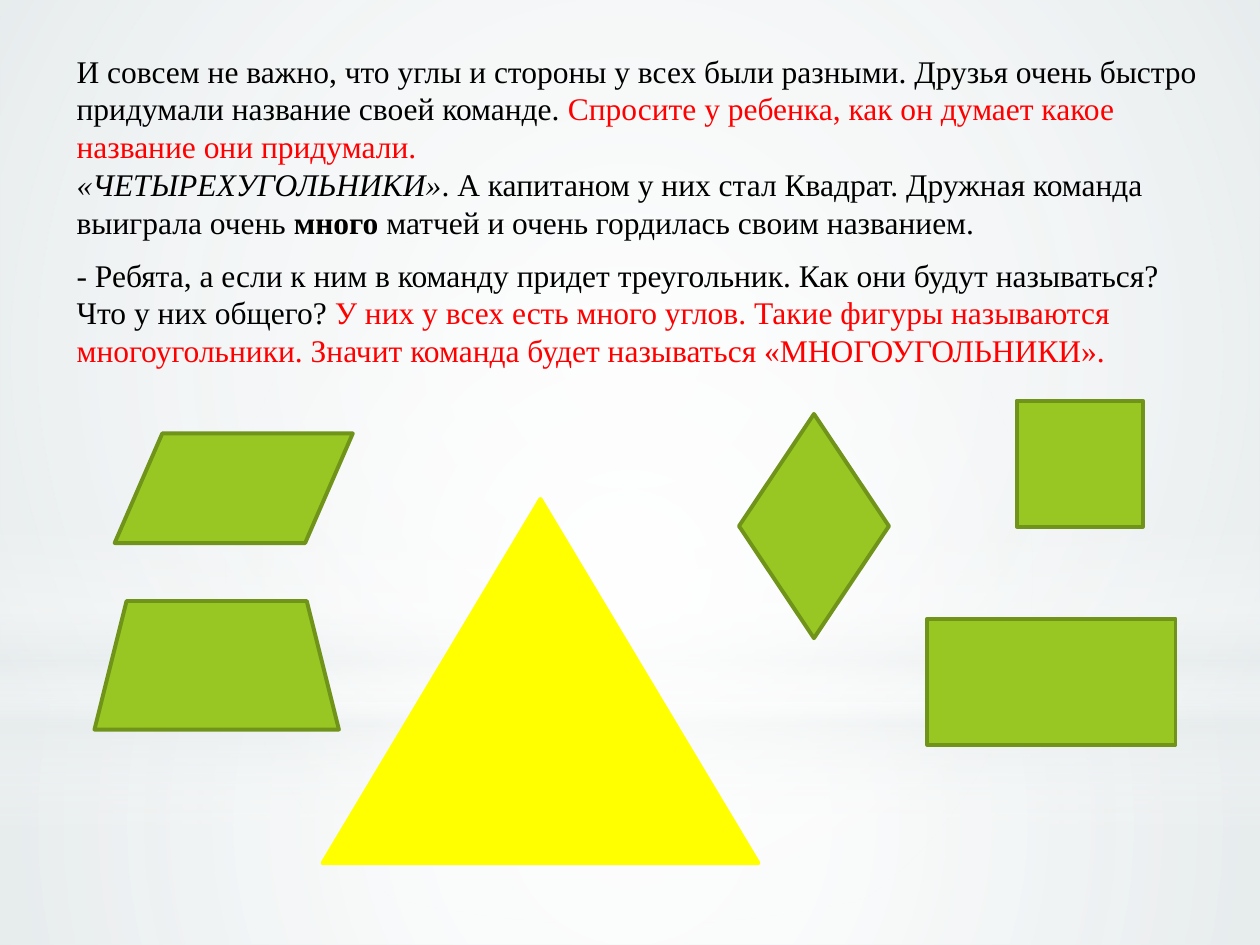
from dataclasses import dataclass

from pptx import Presentation
from pptx.dml.color import RGBColor
from pptx.enum.shapes import MSO_SHAPE as Kind
from pptx.enum.text import MSO_AUTO_SIZE as Fit
from pptx.oxml import parse_xml
from pptx.oxml.ns import nsdecls, qn
from pptx.util import Inches, Pt


@dataclass(frozen=True)
class Theme:
    font: str = "Times New Roman"
    size: float = 18
    edge: float = 2.25
    back: str = "E7ECED"
    white: str = "FFFFFF"
    ink: str = "000000"
    red: str = "FF0000"
    green: str = "98C723"
    moss: str = "70931A"
    sun: str = "FFFF00"


THEME = Theme()


def rgb(code):
    return RGBColor.from_string(code)


def add_run(para, text, color=THEME.ink, bold=False, italic=False):
    run = para.add_run()
    run.text = text
    font = run.font
    font.name, font.size = THEME.font, Pt(THEME.size)
    font.bold, font.italic = bold, italic
    font.color.rgb = rgb(color)


class Page:
    def __init__(self, slide, theme):
        self.slide, self.theme = slide, theme
        fill = slide.background.fill
        fill.solid()
        fill.fore_color.rgb = rgb(theme.back)

    def shape(self, kind, box, fill, line=None, turn=0):
        item = self.slide.shapes.add_shape(kind, *map(Inches, box))
        item.shadow.inherit = False
        item.rotation = turn
        item.fill.solid()
        item.fill.fore_color.rgb = rgb(fill)
        if line:
            item.line.color.rgb = rgb(line)
            item.line.width = Pt(self.theme.edge)
        else:
            item.line.fill.background()
        return item

    def glow(self, kind, box, stops, round=True):
        """Gradient shape; stops are (place %, colour, opacity %)."""
        props = self.shape(kind, box, self.theme.white)._element.spPr
        marks = "".join(
            f'<a:gs pos="{pos * 1000}"><a:srgbClr val="{color}">'
            f'<a:alpha val="{alpha * 1000}"/></a:srgbClr></a:gs>'
            for pos, color, alpha in stops)
        way = ('<a:path path="circle"><a:fillToRect l="50000" t="50000" '
               'r="50000" b="50000"/></a:path>' if round
               else '<a:lin ang="5400000" scaled="0"/>')
        grad = parse_xml(f'<a:gradFill {nsdecls("a")} rotWithShape="1">'
                         f'<a:gsLst>{marks}</a:gsLst>{way}</a:gradFill>')
        props.replace(props.find(qn("a:solidFill")), grad)

    def text(self, box, paras):
        """Each paragraph is a list of (text, format) pairs."""
        frame = self.slide.shapes.add_textbox(*map(Inches, box)).text_frame
        frame.word_wrap = True
        frame.auto_size = Fit.SHAPE_TO_FIT_TEXT
        for num, runs in enumerate(paras):
            para = frame.add_paragraph() if num else frame.paragraphs[0]
            for text, style in runs:
                add_run(para, text, **style)


def main():
    deck = Presentation()
    deck.slide_width, deck.slide_height = Inches(10), Inches(7.5)
    page = Page(deck.slides.add_slide(deck.slide_layouts[6]), THEME)

    white, back = THEME.white, THEME.back
    page.glow(Kind.RECTANGLE, (0, 5.58, 10, 1.92),
              [(0, white, 91), (37, white, 76), (100, back, 79)])
    page.glow(Kind.RECTANGLE, (0, 0, 10, 5.58),
              [(0, white, 89), (48, white, 62), (100, back, 79)])
    page.glow(Kind.RECTANGLE, (0, 4.12, 10, 2.5),
              [(0, white, 0), (29, white, 30), (45, back, 40),
               (55, white, 26), (65, back, 60), (100, white, 0)], round=False)
    page.glow(Kind.OVAL, (0, 1.75, 10, 5.58),
              [(0, white, 100), (56, white, 0)])

    red = {"color": THEME.red}
    page.text((0.51, 0.36, 9.21, 1.62), [
        [("И совсем не важно, что углы и стороны у всех были разными. "
          "Друзья очень быстро придумали название своей команде. ", {}),
         ("Спросите у ребенка, как он думает какое название они придумали.",
          red)],
        [("«ЧЕТЫРЕХУГОЛЬНИКИ»", {"italic": True}),
         (". А капитаном у них стал Квадрат. Дружная команда выиграла "
          "очень ", {}),
         ("много", {"bold": True}),
         (" матчей и очень гордилась своим названием.", {})]])
    page.text((0.51, 1.98, 9.21, 1.01), [
        [("- Ребята, а если к ним в команду придет треугольник. Как они "
          "будут называться? Что у них общего? ", {}),
         ("У них у всех есть много углов. Такие фигуры называются "
          "многоугольники. Значит команда будет называться "
          "«МНОГОУГОЛЬНИКИ».", red)]])

    page.shape(Kind.ISOSCELES_TRIANGLE, (2.56, 3.96, 3.46, 2.89),
               THEME.sun, THEME.sun)
    for kind, box, turn in [
            (Kind.FLOWCHART_DATA, (0.91, 3.44, 1.89, 0.87), 0),
            (Kind.TRAPEZOID, (0.75, 4.77, 1.94, 1.02), 0),
            (Kind.RECTANGLE, (8.07, 3.18, 1, 1), 0),
            (Kind.RECTANGLE, (7.36, 4.91, 1.97, 1), 0),
            (Kind.FLOWCHART_DECISION, (5.57, 3.58, 1.78, 1.19), 270)]:
        page.shape(kind, box, THEME.green, THEME.moss, turn)
    deck.save("out.pptx")


if __name__ == "__main__":
    main()
